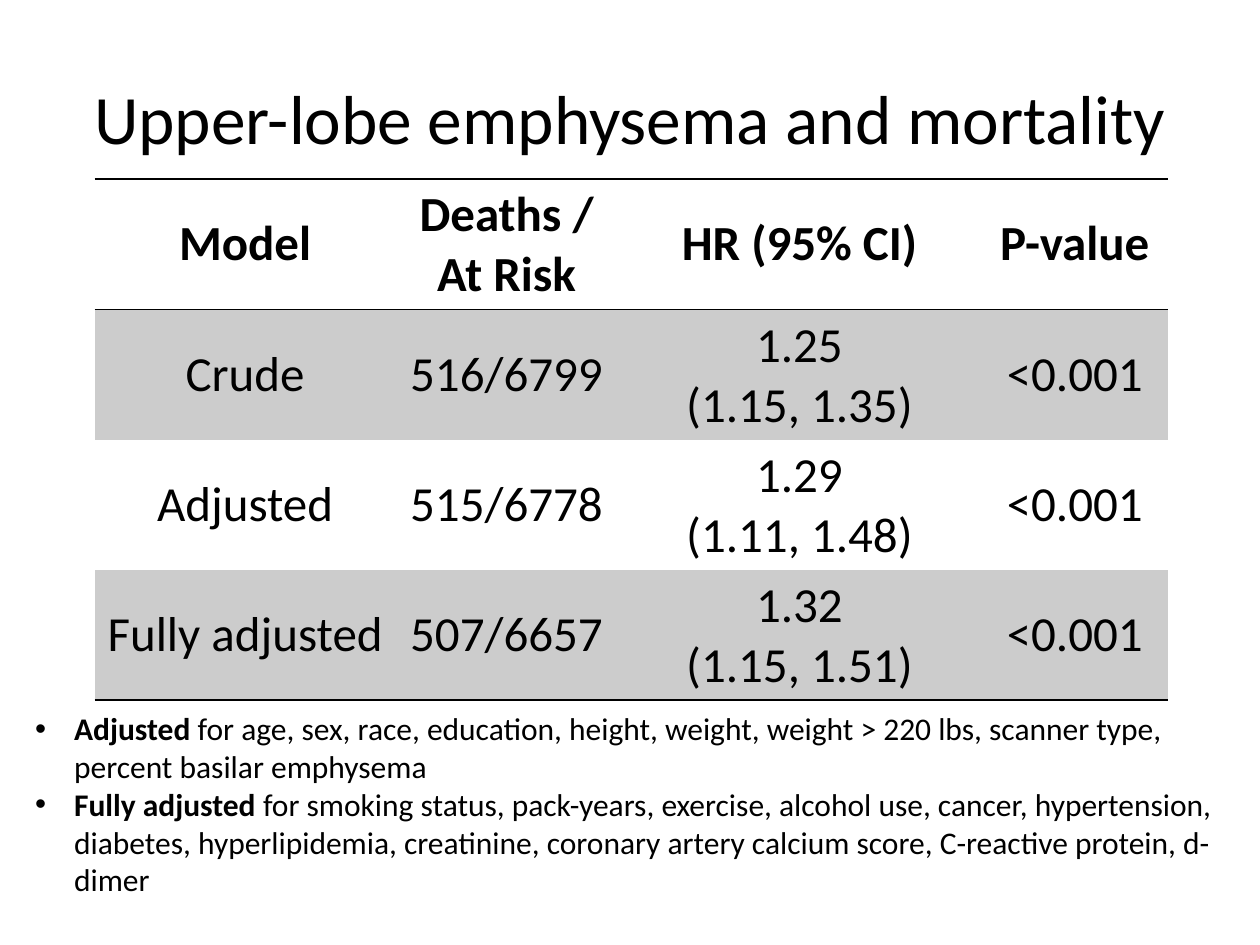
"""Build the slide on upper-lobe emphysema and mortality."""
from lxml.etree import SubElement as Sub
from pptx import Presentation
from pptx.dml.color import RGBColor
from pptx.enum.text import MSO_ANCHOR as Anchor, PP_ALIGN as Align
from pptx.oxml import parse_xml
from pptx.oxml.ns import qn, nsdecls
from pptx.util import Inches, Pt

BLACK = RGBColor(0, 0, 0)
GRAY = RGBColor(0xCC, 0xCC, 0xCC)
PLAIN = "{2D5ABB26-0587-4C30-8999-92F81FD0307C}"
COLS = (2.39, 1.76, 2.89, 1.48)
ROW = 1.03
ROWS = (
    ("Model", "Deaths / At Risk", "HR (95% CI)", "P-value"),
    ("Crude", "516/6799", "1.25\n(1.15, 1.35)", "<0.001"),
    ("Adjusted", "515/6778", "1.29\n(1.11, 1.48)", "<0.001"),
    ("Fully adjusted", "507/6657", "1.32\n(1.15, 1.51)", "<0.001"),
)
NOTES = (
    ("Adjusted", " for age, sex, race, education, height, weight, "
     "weight > 220 lbs, scanner type, percent basilar emphysema"),
    ("Fully adjusted ", "for smoking status, pack-years, exercise, alcohol use, "
     "cancer, hypertension, diabetes, hyperlipidemia, creatinine, "
     "coronary artery calcium score, C-reactive protein, d-dimer"),
)


def write(para, text, size, bold=False):
    """Add one run to a paragraph."""
    run = para.add_run()
    run.text = text
    font = run.font
    font.name, font.size, font.bold = "Calibri", Pt(size), bold
    font.color.rgb = BLACK


def rule(cell, side):
    """Draw a thin black line on one side of a cell."""
    line = parse_xml(
        f'<a:{side} {nsdecls("a")} w="12700"><a:solidFill>'
        f'<a:srgbClr val="{BLACK}"/></a:solidFill></a:{side}>')
    cell._tc.get_or_add_tcPr().insert(0, line)


deck = Presentation()
deck.slide_width, deck.slide_height = Inches(10), Inches(7.5)
slide = deck.slides.add_slide(deck.slide_layouts[6])
shapes = slide.shapes

title = shapes.add_textbox(Inches(0.5), Inches(0.3), Inches(9), Inches(1.25))
frame = title.text_frame
frame.word_wrap = True
frame.vertical_anchor = Anchor.MIDDLE
para = frame.paragraphs[0]
para.alignment = Align.CENTER
write(para, "Upper-lobe emphysema and mortality", 39.6)

table = shapes.add_table(
    len(ROWS), len(COLS), Inches(0.75), Inches(1.42),
    Inches(sum(COLS)), Inches(ROW * len(ROWS))).table
table.horz_banding = False
table._tbl.tblPr.find(qn("a:tableStyleId")).text = PLAIN
for col, width in zip(table.columns, COLS):
    col.width = Inches(width)
for r, row in enumerate(ROWS):
    for c, text in enumerate(row):
        cell = table.cell(r, c)
        cell.vertical_anchor = Anchor.MIDDLE
        frame = cell.text_frame
        for n, part in enumerate(text.split("\n")):
            para = frame.add_paragraph() if n else frame.paragraphs[0]
            para.alignment = Align.CENTER
            write(para, part, 28, bold=r == 0)
        if r % 2:
            cell.fill.solid()
            cell.fill.fore_color.rgb = GRAY
        else:
            cell.fill.background()
        if r in (0, len(ROWS) - 1):
            rule(cell, "lnB")
        if r == 0:
            rule(cell, "lnT")

notes = shapes.add_textbox(Inches(0.18), Inches(5.58), Inches(9.58), Inches(1.62))
frame = notes.text_frame
frame.word_wrap = True
for n, (head, body) in enumerate(NOTES):
    para = frame.add_paragraph() if n else frame.paragraphs[0]
    props = para._p.get_or_add_pPr()
    props.set("marL", str(Inches(0.31)))
    props.set("indent", str(-Inches(0.31)))
    Sub(props, qn("a:buFont")).set("typeface", "Arial")
    Sub(props, qn("a:buChar")).set("char", "•")
    write(para, head, 18, bold=True)
    write(para, body, 18)

deck.save("out.pptx")
